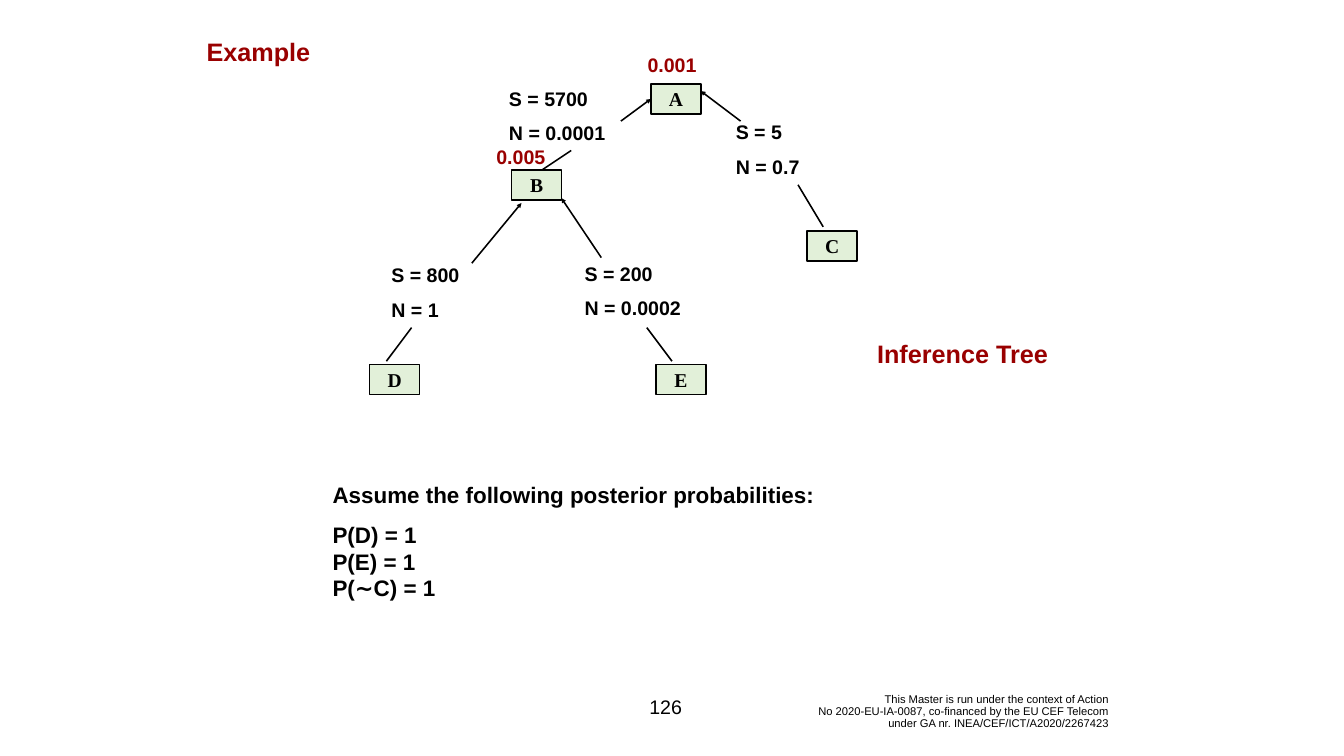
from typing import NamedTuple

from lxml import etree
from pptx import Presentation
from pptx.dml.color import RGBColor
from pptx.enum.shapes import MSO_CONNECTOR, MSO_SHAPE
from pptx.enum.text import MSO_ANCHOR, PP_ALIGN
from pptx.oxml.ns import qn
from pptx.util import Pt

STRAIGHT = MSO_CONNECTOR.STRAIGHT
RECTANGLE = MSO_SHAPE.RECTANGLE
TOP, MIDDLE = MSO_ANCHOR.TOP, MSO_ANCHOR.MIDDLE
LEFT, CENTER, RIGHT = PP_ALIGN.LEFT, PP_ALIGN.CENTER, PP_ALIGN.RIGHT

BLACK = RGBColor(0x00, 0x00, 0x00)
DARK_RED = RGBColor(0x99, 0x00, 0x00)
PALE_GREEN = RGBColor(0xE2, 0xF0, 0xD9)

SANS = "Arial"
SERIF = "Times New Roman"
NODE_WIDTH, NODE_HEIGHT = 71.5, 42.5
LINE_WIDTH = 2.25
LEFT_SIDE = 1


class Node(NamedTuple):
    name: str
    left: float
    top: float


class Rule(NamedTuple):
    sufficiency: str
    necessity: str
    left: float
    top: float


class Edge(NamedTuple):
    x1: float
    y1: float
    x2: float
    y2: float
    arrow: bool = False
    target: str = ""


class Label(NamedTuple):
    text: str
    left: float
    top: float
    width: float
    height: float
    size: float
    color: RGBColor = DARK_RED
    bold: bool = True
    align: PP_ALIGN = CENTER
    anchor: MSO_ANCHOR = TOP
    line_spacing: float = 1.0


NODES = [
    Node("Α", 930, 120),
    Node("Β", 731, 243),
    Node("C", 1153, 330),
    Node("Ε", 937, 521),
    Node("D", 528, 521),
]

RULES = [
    Rule("S = 5700", "N = 0.0001", 720, 120),
    Rule("S = 5", "N = 0.7", 1044, 168),
    Rule("S = 200", "N = 0.0002", 828, 370),
    Rule("S = 800", "N = 1", 552, 372),
]

EDGES = [
    Edge(887, 173, 930, 141.25, arrow=True, target="Α"),
    Edge(1058, 173, 1001, 130, arrow=True),
    Edge(774, 243, 816, 215),
    Edge(859, 368, 802, 283, arrow=True),
    Edge(674, 376, 745, 290, arrow=True),
    Edge(1140, 264, 1176, 324),
    Edge(924, 468, 960, 516),
    Edge(588, 468, 552, 516),
]

LABELS = [
    Label(
        "This Master is run under the context of Action\v"
        "No 2020-EU-IA-0087, co-financed by the EU CEF Telecom\v"
        "under GA nr. INEA/CEF/ICT/A2020/2267423",
        1081, 989, 510, 55, 16, BLACK, False, RIGHT, MIDDLE, 0.9,
    ),
    Label("126", 911, 980, 80, 58, 28, BLACK, False, CENTER, MIDDLE),
    Label("Example", 288, 48, 264, 51, 36, align=LEFT),
    Label("0.005", 660, 204, 168, 41, 28),
    Label("0.001", 876, 72, 168, 41, 28),
    Label("Inference Tree ", 1188, 480, 384, 51, 36),
]

ASSUMPTIONS = [
    "Assume the following posterior probabilities:",
    "P(D) = 1",
    "P(E) = 1",
    "P(∼C) = 1",
]


def write(para, text: str, *, size: float, color: RGBColor = BLACK,
          font: str = SANS, bold: bool = True, align: PP_ALIGN = LEFT,
          before: float = 0, line_spacing: float = 1.0) -> None:
    para.text = text
    para.alignment = align
    para.line_spacing = line_spacing
    para.space_before = Pt(before)
    for span in para.runs:
        span.font.name = font
        span.font.size = Pt(size)
        span.font.bold = bold
        span.font.color.rgb = color


def add_box(page, left: float, top: float, width: float, height: float,
            anchor: MSO_ANCHOR = TOP):
    box = page.shapes.add_textbox(Pt(left), Pt(top), Pt(width), Pt(height))
    box.text_frame.word_wrap = True
    box.text_frame.vertical_anchor = anchor
    return box.text_frame


def add_label(page, label: Label) -> None:
    frame = add_box(page, label.left, label.top, label.width, label.height, label.anchor)
    write(frame.paragraphs[0], label.text, size=label.size, color=label.color,
          bold=label.bold, align=label.align, line_spacing=label.line_spacing)


def add_rule(page, rule: Rule) -> None:
    frame = add_box(page, rule.left, rule.top, 192, 92)
    write(frame.paragraphs[0], rule.sufficiency, size=28)
    write(frame.add_paragraph(), rule.necessity, size=28, before=16)


def add_node(page, node: Node):
    shape = page.shapes.add_shape(RECTANGLE, Pt(node.left), Pt(node.top),
                                  Pt(NODE_WIDTH), Pt(NODE_HEIGHT))
    shape.shadow.inherit = False
    shape.fill.solid()
    shape.fill.fore_color.rgb = PALE_GREEN
    shape.line.color.rgb = BLACK
    shape.line.width = Pt(LINE_WIDTH)
    shape.text_frame.vertical_anchor = MIDDLE
    write(shape.text_frame.paragraphs[0], node.name, size=28, font=SERIF, align=CENTER)
    return shape


def add_edge(page, edge: Edge, nodes: dict) -> None:
    connector = page.shapes.add_connector(STRAIGHT, Pt(edge.x1), Pt(edge.y1),
                                          Pt(edge.x2), Pt(edge.y2))
    connector.line.color.rgb = BLACK
    connector.line.width = Pt(LINE_WIDTH)
    if edge.arrow:
        line = connector.line._get_or_add_ln()
        etree.SubElement(line, qn("a:tailEnd"), type="triangle")
    etree.SubElement(connector._element.spPr, qn("a:effectLst"))
    if edge.target:
        connector.end_connect(nodes[edge.target], LEFT_SIDE)


def add_assumptions(page) -> None:
    frame = add_box(page, 468, 684, 936, 181)
    for index, text in enumerate(ASSUMPTIONS):
        para = frame.add_paragraph() if index else frame.paragraphs[0]
        write(para, text, size=32, before=18 if index == 1 else 0)


def main() -> None:
    deck = Presentation()
    deck.slide_width, deck.slide_height = Pt(1920), Pt(1080)
    page = deck.slides.add_slide(deck.slide_layouts[6])
    nodes = {node.name: add_node(page, node) for node in NODES}
    for edge in EDGES:
        add_edge(page, edge, nodes)
    for rule in RULES:
        add_rule(page, rule)
    for label in LABELS:
        add_label(page, label)
    add_assumptions(page)
    deck.save("out.pptx")


if __name__ == "__main__":
    main()
